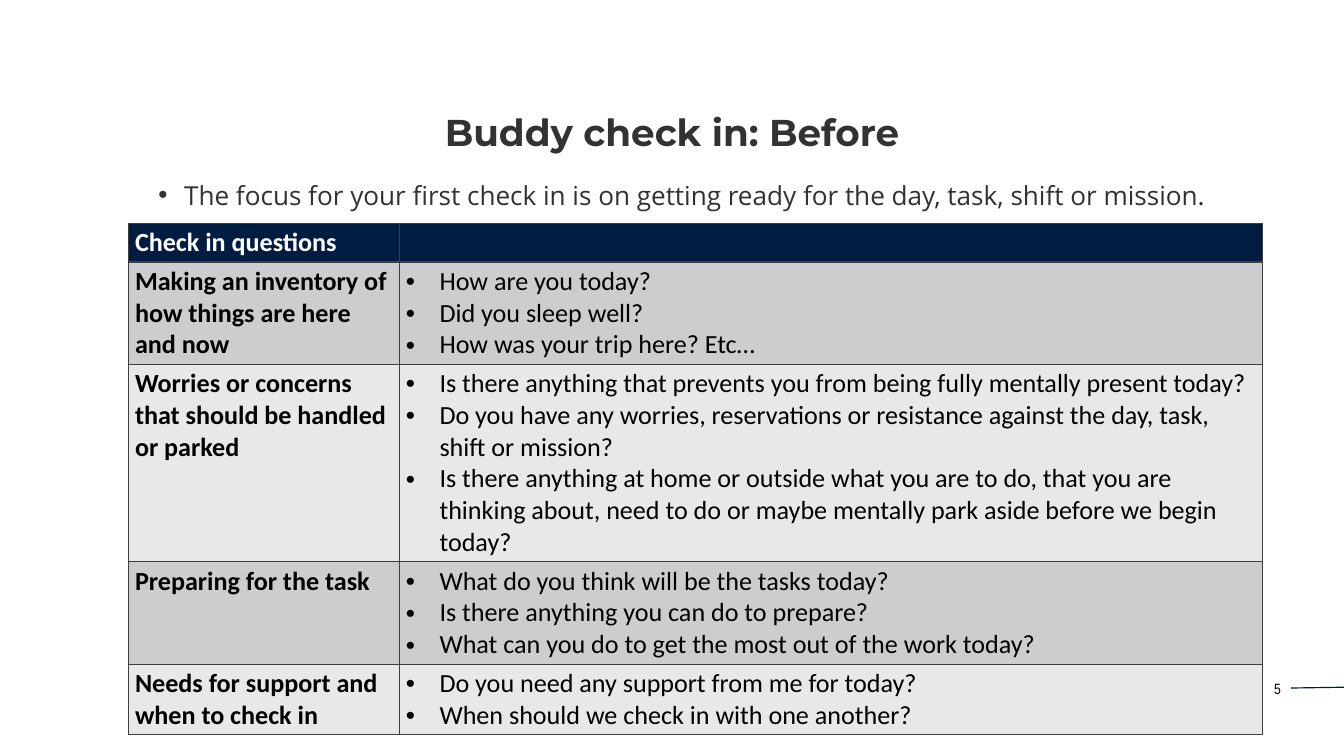
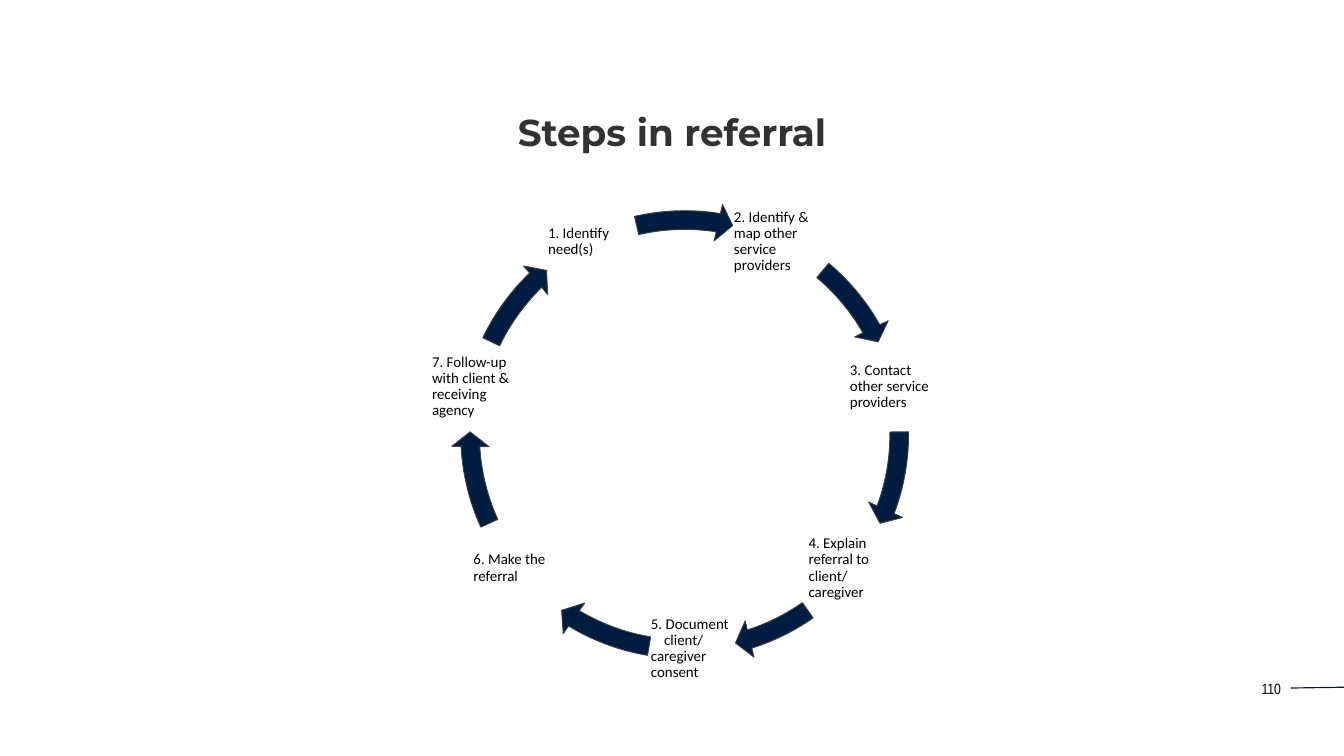
from math import cos, radians, sin

from lxml.etree import SubElement
from pptx import Presentation
from pptx.dml.color import RGBColor
from pptx.enum.shapes import MSO_CONNECTOR as Link, MSO_SHAPE as Preset
from pptx.enum.text import MSO_ANCHOR as Anchor, MSO_AUTO_SIZE as Fit, PP_ALIGN as Align
from pptx.oxml.ns import qn
from pptx.util import Cm, Pt

NAVY, EDGE, INK = "001D41", "3F3F3F", "323232"
BLACK, WHITE = "000000", "FFFFFF"
BANDS = ("CCCDCF", "E7E8E9")

TITLE_ONLY = 5
TITLE = dict(name="Montserrat", size=Pt(40), bold=True, color=INK)
LEAD = dict(name="Open Sans", size=Pt(28), bold=False, color=INK)
NUMBER = dict(name="Arial Narrow", size=Pt(16), bold=False, color=BLACK)
STEP = dict(name="Calibri", size=Pt(16), bold=False, color=BLACK)
ANSWER = dict(name="Calibri", size=Pt(28), bold=False, color=BLACK)
TOPIC = {**ANSWER, "bold": True}
HEADER = {**TOPIC, "color": WHITE}


def rgb(code):
    return RGBColor.from_string(code)


def apply(target, values):
    for key, value in values.items():
        setattr(target, key, value)


def add_bullet(paragraph, indent):
    """Hang a round bullet in front of the paragraph."""
    props = paragraph._p.get_or_add_pPr()
    props.set("marL", str(Cm(indent)))
    props.set("indent", str(-Cm(indent)))
    SubElement(props, qn("a:buFont"), typeface="Arial")
    SubElement(props, qn("a:buChar"), char="•")


def add_tab(paragraph, position):
    tabs = SubElement(paragraph._p.get_or_add_pPr(), qn("a:tabLst"))
    SubElement(tabs, qn("a:tab"), pos=str(Cm(position)), algn="l")


def add_borders(cell, bottom_width):
    props = cell._tc.get_or_add_tcPr()
    for side, width in (("L", 1), ("R", 1), ("T", 1), ("B", bottom_width)):
        line = SubElement(props, qn(f"a:ln{side}"), w=str(Pt(width)))
        fill = SubElement(line, qn("a:solidFill"))
        SubElement(fill, qn("a:srgbClr"), val=EDGE)


class Deck:
    """Holds the shared style and the slide being built."""

    def __init__(self):
        self.prs = Presentation()
        self.prs.slide_width, self.prs.slide_height = Cm(50.8), Cm(28.58)
        self.slide = None

    def new_slide(self, title, number):
        self.slide = self.prs.slides.add_slide(self.prs.slide_layouts[TITLE_ONLY])
        heading = self.slide.shapes.title
        box = dict(left=Cm(5.74), top=Cm(3.86), width=Cm(39.32), height=Cm(2.13))
        apply(heading, box)
        apply(heading.text_frame, dict(vertical_anchor=Anchor.BOTTOM,
                                       word_wrap=True, auto_size=Fit.NONE))
        self.paragraphs(heading.text_frame, [title], TITLE,
                        alignment=Align.CENTER, line_spacing=0.9)
        # Page number and its rule
        self.text(46.84, 25.55, 1.83, 0.94, number, NUMBER, alignment=Align.RIGHT)
        self.rule(48.79, 26.01, 50.8, 25.98)

    def paragraphs(self, frame, lines, font, bullet=None, tab=None, **layout):
        for index, line in enumerate(lines):
            paragraph = frame.add_paragraph() if index else frame.paragraphs[0]
            paragraph.text = line
            if bullet:
                add_bullet(paragraph, bullet)
            if tab:
                add_tab(paragraph, tab)
            apply(paragraph, layout)
            for run in paragraph.runs:
                apply(run.font, {k: v for k, v in font.items() if k != "color"})
                run.font.color.rgb = rgb(font["color"])

    def text(self, left, top, width, height, line, font,
             anchor=Anchor.TOP, inset=None, **layout):
        box = self.slide.shapes.add_textbox(Cm(left), Cm(top), Cm(width), Cm(height))
        frame = box.text_frame
        apply(frame, dict(word_wrap=True, vertical_anchor=anchor))
        if inset is not None:
            sides = ("left", "top", "right", "bottom")
            apply(frame, {f"margin_{side}": Cm(inset) for side in sides})
        self.paragraphs(frame, [line], font, **layout)

    def rule(self, *ends):
        rule = self.slide.shapes.add_connector(Link.STRAIGHT, *map(Cm, ends))
        rule.line.color.rgb = rgb(NAVY)
        rule.line.width = Pt(1.25)
        SubElement(rule._element.spPr, qn("a:effectLst"))

    def arc_arrow(self, left, top, size, start, end):
        arrow = self.slide.shapes.add_shape(
            Preset.CIRCULAR_ARROW, Cm(left), Cm(top), Cm(size), Cm(size))
        arrow.shadow.inherit = False
        arrow.fill.solid()
        arrow.fill.fore_color.rgb = rgb(NAVY)
        arrow.line.color.rgb = rgb(EDGE)
        arrow.line.width = Pt(1)
        # Angles count 60000 units a degree, adjustments 100000 units
        values = (0.04, 2.35, end * 0.6, start * 0.6, 0.04)
        for index, value in enumerate(values):
            arrow.adjustments[index] = value

    def cell(self, cell, lines, font, fill, bullet=None, bottom_width=1):
        self.paragraphs(cell.text_frame, lines, font, bullet)
        add_borders(cell, bottom_width)
        cell.fill.solid()
        cell.fill.fore_color.rgb = rgb(fill)

    def question_table(self, left, top, widths, heights, header, rows):
        table = self.slide.shapes.add_table(
            len(heights), len(widths), Cm(left), Cm(top),
            Cm(sum(widths)), Cm(sum(heights))).table
        for column, width in zip(table.columns, widths):
            column.width = Cm(width)
        for row, height in zip(table.rows, heights):
            row.height = Cm(height)
        for index, label in enumerate(header):
            self.cell(table.cell(0, index), [label] if label else [], HEADER, NAVY,
                      bottom_width=3)
        for index, (topic, questions) in enumerate(rows):
            band = BANDS[index % 2]
            self.cell(table.cell(index + 1, 0), [topic], TOPIC, band)
            self.cell(table.cell(index + 1, 1), questions, ANSWER, band, bullet=1.27)


CHECK_IN = [
    ("Making an inventory of how things are here and now",
     ["How are you today?",
      "Did you sleep well?",
      "How was your trip here? Etc…"]),
    ("Worries or concerns that should be handled or parked",
     ["Is there anything that prevents you from being fully mentally present today?",
      "Do you have any worries, reservations or resistance against the day, task, "
      "shift or mission?",
      "Is there anything at home or outside what you are to do, that you are thinking "
      "about, need to do or maybe mentally park aside before we begin today?"]),
    ("Preparing for the task",
     ["What do you think will be the tasks today?",
      "Is there anything you can do to prepare?",
      "What can you do to get the most out of the work today?"]),
    ("Needs for support and when to check in",
     ["Do you need any support from me for today?",
      "When should we check in with one another?"]),
]

# Each step with the start and end angle of the arrow that follows it
REFERRAL = [
    ("1. Identify need(s)", 257.06, 279.03),
    ("2. Identify & map other service providers", 310.08, 330.47),
    ("3. Contact other service providers", 359.28, 20.52),
    ("4. Explain referral to client/ caregiver", 55, 72.38),
    ("5. Document\v\tclient/ caregiver consent", 99.55, 121.07),
    ("6. Make the referral", 155.57, 176.81),
    ("7. Follow-up with client & receiving agency", 205.62, 226.01),
]


def build_check_in(deck):
    deck.new_slide("Buddy check in: Before", "5")
    deck.text(5.74, 6.65, 41.02, 3.53,
              "The focus for your first check in is on getting ready for the day, "
              "task, shift or mission.", LEAD, bullet=0.97)
    deck.question_table(4.85, 8.43, (10.24, 32.64), (1.47, 3.86, 7.48, 3.86, 2.68),
                        ("Check in questions", ""), CHECK_IN)


def build_referral(deck):
    deck.new_slide("Steps in referral", "110")
    center_x, center_y, radius = 25.88, 16.43, 8.1
    ring, label = 17.63, 3.4
    turn = 360 / len(REFERRAL)
    for index, (step, start, end) in enumerate(REFERRAL):
        angle = radians(turn * (index - 0.5) - 90)
        x, y = center_x + radius * cos(angle), center_y + radius * sin(angle)
        width, tab = label, None
        if "\t" in step:  # narrower label, moved clear of the arrow
            x, width, tab = x + 0.29, 3.23, 0.5
        deck.text(x - width / 2, y - label / 2, width, label, step, STEP,
                  anchor=Anchor.MIDDLE, inset=0.05, tab=tab,
                  line_spacing=0.9, space_after=Pt(5.6))
        deck.arc_arrow(center_x - ring / 2, center_y - ring / 2, ring, start, end)


def main():
    deck = Deck()
    build_check_in(deck)
    build_referral(deck)
    deck.prs.save("out.pptx")


if __name__ == "__main__":
    main()
